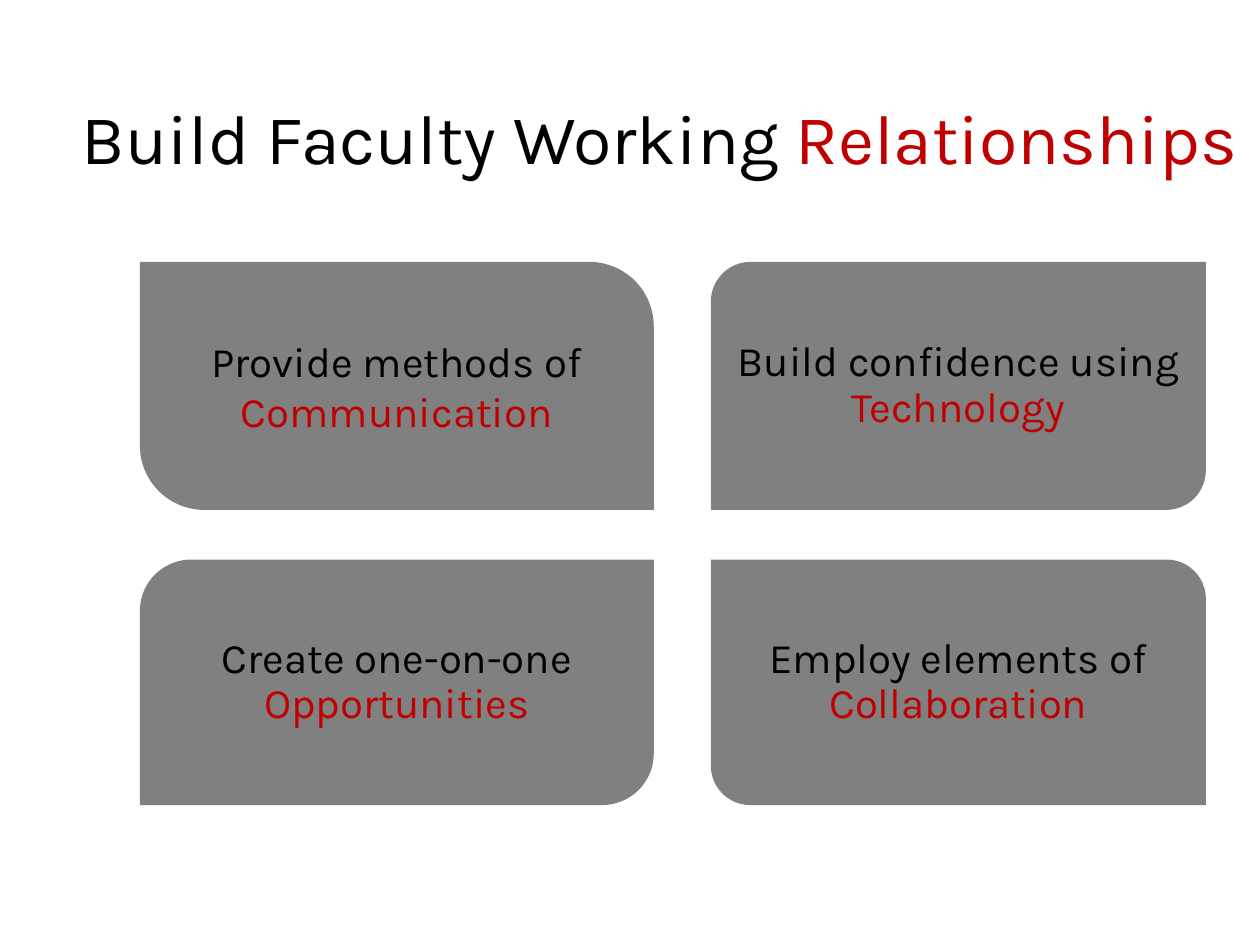
from pptx import Presentation
from pptx.dml.color import RGBColor
from pptx.enum.shapes import MSO_SHAPE
from pptx.enum.text import MSO_ANCHOR, PP_ALIGN
from pptx.util import Cm, Pt

BLACK = RGBColor(0x00, 0x00, 0x00)
RED = RGBColor(0xC0, 0x00, 0x00)
GRAY = RGBColor(0x80, 0x80, 0x80)


def write_phrase(shape, lead, keyword, size):
    """Centre a black lead-in followed by a red keyword in the shape."""
    frame = shape.text_frame
    frame.word_wrap = True
    frame.vertical_anchor = MSO_ANCHOR.MIDDLE
    para = frame.paragraphs[0]
    para.alignment = PP_ALIGN.CENTER
    for text, color in ((lead, BLACK), (keyword, RED)):
        span = para.add_run()
        span.text = text
        span.font.name = "Karla"
        span.font.size = Pt(size)
        span.font.color.rgb = color
    return para


deck = Presentation()
deck.slide_width, deck.slide_height = Cm(25.4), Cm(19.05)
page = deck.slides.add_slide(deck.slide_layouts[5])

title = page.shapes.title
title.left, title.top, title.width, title.height = Cm(1.19), Cm(0.97), Cm(24.21), Cm(3.58)
write_phrase(title, "Build Faculty Working ", "Relationships", 40)

columns = ((2.82, 10.36), (14.33, 9.98))  # left, width
rows = ((5.28, 5.0), (11.28, 4.95))  # top, height

# column, row, the two corner roundings, line spacing, lead-in, keyword
cards = (
    (0, 0, (0, 0.26), 1.0, "Provide methods of ", "Communication"),
    (0, 1, (0.21, 0), 0.9, "Create one-on-one ", "Opportunities"),
    (1, 1, (0, 0.16), 0.9, "Employ elements of ", "Collaboration"),
    (1, 0, (0.16, 0), 0.9, "Build confidence using ", "Technology"),
)
for column, row, roundings, spacing, lead, keyword in cards:
    left, width = columns[column]
    top, height = rows[row]
    card = page.shapes.add_shape(MSO_SHAPE.ROUND_2_DIAG_RECTANGLE,
                                 Cm(left), Cm(top), Cm(width), Cm(height))
    card.adjustments[0], card.adjustments[1] = roundings
    card.shadow.inherit = False
    card.fill.solid()
    card.fill.fore_color.rgb = GRAY
    card.line.fill.background()
    write_phrase(card, lead, keyword, 24).line_spacing = spacing

deck.save("out.pptx")
